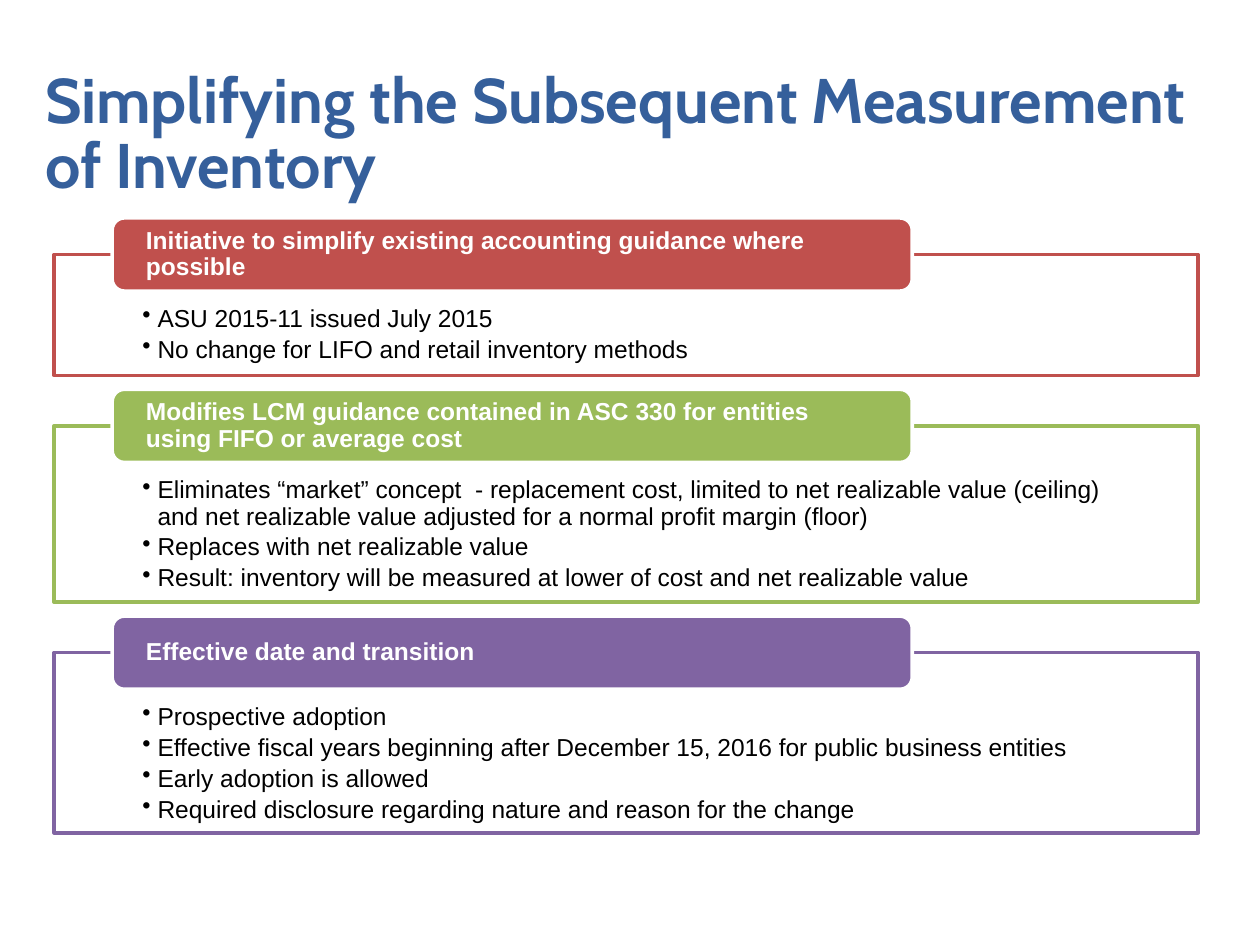
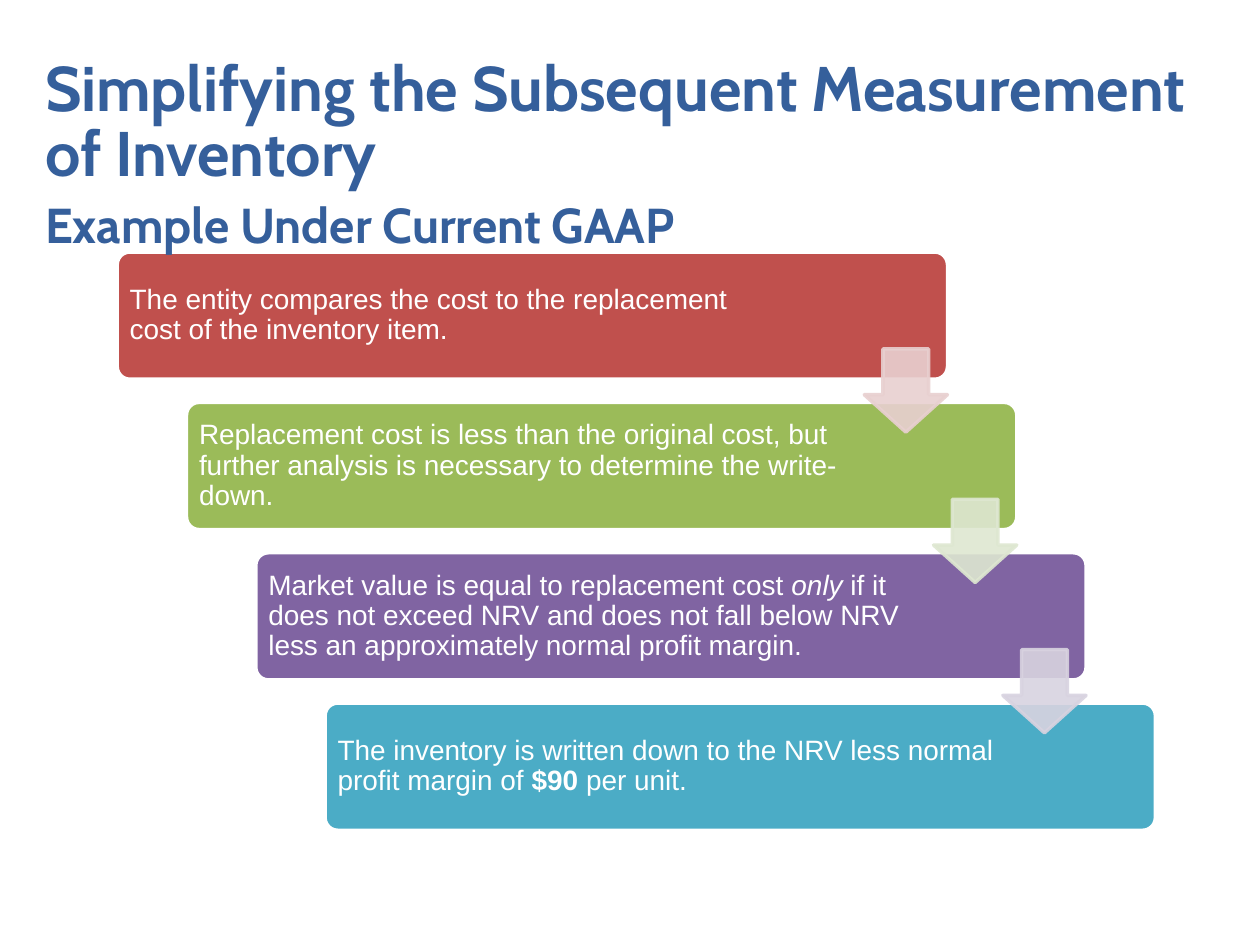
from pptx import Presentation
from pptx.dml.color import RGBColor
from pptx.enum import shapes, text
from pptx.oxml import ns
from pptx.util import Inches, Pt
from lxml import etree

WHITE = RGBColor(0xFF, 0xFF, 0xFF)
BLACK = RGBColor(0, 0, 0)
TITLE_BLUE = RGBColor(0x35, 0x5F, 0x9B)
RED = RGBColor(0xC0, 0x50, 0x4D)
GREEN = RGBColor(0x9B, 0xBB, 0x59)
PURPLE = RGBColor(0x80, 0x64, 0xA2)
TEAL = RGBColor(0x4B, 0xAC, 0xC6)
PALE_RED = RGBColor(0xE8, 0xD0, 0xD0)
PALE_GREEN = RGBColor(0xDE, 0xE7, 0xD1)
PALE_PURPLE = RGBColor(0xD8, 0xD3, 0xE0)
TITLE = "Simplifying the Subsequent Measurement of Inventory"


def add_box(slide, preset, box, fill, line, opacity=100):
    shape = slide.shapes.add_shape(preset, *[Inches(length) for length in box])
    shape.shadow.inherit = False
    shape.fill.solid()
    shape.fill.fore_color.rgb = fill
    shape.line.color.rgb = line
    shape.line.width = Pt(2)
    if opacity < 100:
        for color in shape._element.spPr.iter(ns.qn("a:srgbClr")):
            if color.get("val") == str(fill):
                etree.SubElement(color, ns.qn("a:alpha"), val=str(opacity * 1000))
    return shape


def style_text(shape, insets, anchor, size, color, bold=None, space_after=0):
    frame = shape.text_frame
    frame.word_wrap = True
    frame.vertical_anchor = anchor
    frame.margin_left, frame.margin_top, frame.margin_right, frame.margin_bottom = [
        Inches(inset) for inset in insets]
    for paragraph in frame.paragraphs:
        paragraph.alignment = text.PP_ALIGN.LEFT
        paragraph.line_spacing = 0.9
        paragraph.space_after = Pt(space_after)
        for run in paragraph.runs:
            run.font.name = "Arial"
            run.font.size = Pt(size)
            run.font.color.rgb = color
            if bold is not None:
                run.font.bold = bold


presentation = Presentation()
presentation.slide_width = Inches(10)
presentation.slide_height = Inches(7.5)
blank = presentation.slide_layouts[6]
overview = presentation.slides.add_slide(blank)
example = presentation.slides.add_slide(blank)

sections = [
    (RED, 0.96, "Initiative to simplify existing accounting guidance where possible", [
        "ASU 2015-11 issued July 2015",
        "No change for LIFO and retail inventory methods"]),
    (GREEN, 1.4, "Modifies LCM guidance contained in ASC 330 for entities using FIFO or average cost", [
        "Eliminates “market” concept  - replacement cost, limited to net realizable value (ceiling) "
        "and net realizable value adjusted for a normal profit margin (floor)",
        "Replaces with net realizable value",
        "Result: inventory will be measured at lower of cost and net realizable value"]),
    (PURPLE, 1.43, "Effective date and transition", [
        "Prospective adoption",
        "Effective fiscal years beginning after December 15, 2016 for public business entities",
        "Early adoption is allowed",
        "Required disclosure regarding nature and reason for the change"]),
]
section_top = 2.02
for color, height, heading, points in sections:
    card = add_box(overview, shapes.MSO_SHAPE.RECTANGLE,
                   (0.43, section_top, 9.08, height), WHITE, color, 90)
    card.text_frame.text = "\n".join(points)
    for paragraph in card.text_frame.paragraphs:
        properties = paragraph._p.get_or_add_pPr()
        properties.set("marL", str(Inches(0.12)))
        properties.set("indent", str(-Inches(0.12)))
        etree.SubElement(properties, ns.qn("a:buChar"), char="•")
    style_text(card, (0.7, 0.41, 0.7, 0.11), text.MSO_ANCHOR.TOP, 14, BLACK, space_after=2.5)

    header = add_box(overview, shapes.MSO_SHAPE.ROUNDED_RECTANGLE,
                     (0.89, section_top - 0.29, 6.35, 0.58), color, WHITE)
    header.text_frame.text = heading
    style_text(header, (0.24, 0, 0.24, 0), text.MSO_ANCHOR.MIDDLE, 14, WHITE, bold=True)
    section_top += height + 0.4

steps = [
    (RED, PALE_RED, [
        ("The entity compares the cost to the replacement cost of the inventory item.", "")]),
    (GREEN, PALE_GREEN, [
        ("Replacement cost is less than the original cost, but further analysis is necessary "
         "to determine the write-down.", "")]),
    (PURPLE, PALE_PURPLE, [
        ("Market value is equal to replacement cost ", ""), ("only", "italic"),
        (" if it does not exceed NRV and does not fall below NRV less an approximately "
         "normal profit margin.", "")]),
    (TEAL, None, [
        ("The inventory is written down to the NRV less normal profit margin of ", ""),
        ("$90 ", "bold"), ("per unit.", "")]),
]
step_width, arrow_size = 6.59, 0.66
step_places = [(0.93 + 0.55 * index, 2 + 3.58 / 3 * index) for index in range(len(steps))]
for (left, top), (color, _, pieces) in zip(step_places, steps):
    step = add_box(example, shapes.MSO_SHAPE.ROUNDED_RECTANGLE,
                   (left, top, step_width, 1.01), color, WHITE)
    step.adjustments[0] = 0.1
    for piece, emphasis in pieces:
        run = step.text_frame.paragraphs[0].add_run()
        run.text = piece
        run.font.bold = emphasis == "bold"
        run.font.italic = emphasis == "italic"
    style_text(step, (0.07, 0.07, 1.25, 0.07), text.MSO_ANCHOR.MIDDLE, 16, WHITE)

for (left, top), (_, pale, _) in zip(step_places[:-1], steps):
    arrow = add_box(example, shapes.MSO_SHAPE.DOWN_ARROW,
                    (left + step_width - arrow_size, top + 0.77, arrow_size, arrow_size),
                    pale, pale, 90)
    arrow.adjustments[0] = 0.55
    arrow.adjustments[1] = 0.45

for slide, top, title in [(overview, 0.59, TITLE),
                          (example, 0.75, TITLE + "\vExample Under Current GAAP")]:
    title_box = slide.shapes.add_textbox(Inches(0.26), Inches(top), Inches(9.74), Inches(0.98))
    frame = title_box.text_frame
    frame.word_wrap = True
    frame.vertical_anchor = text.MSO_ANCHOR.MIDDLE
    frame.text = title
    paragraph = frame.paragraphs[0]
    paragraph.line_spacing = Pt(37)
    for run, size in zip(paragraph.runs, (36, 28)):
        run.font.name = "Cabin"
        run.font.size = Pt(size)
        run.font.bold = True
        run.font.color.rgb = TITLE_BLUE

presentation.save("out.pptx")
